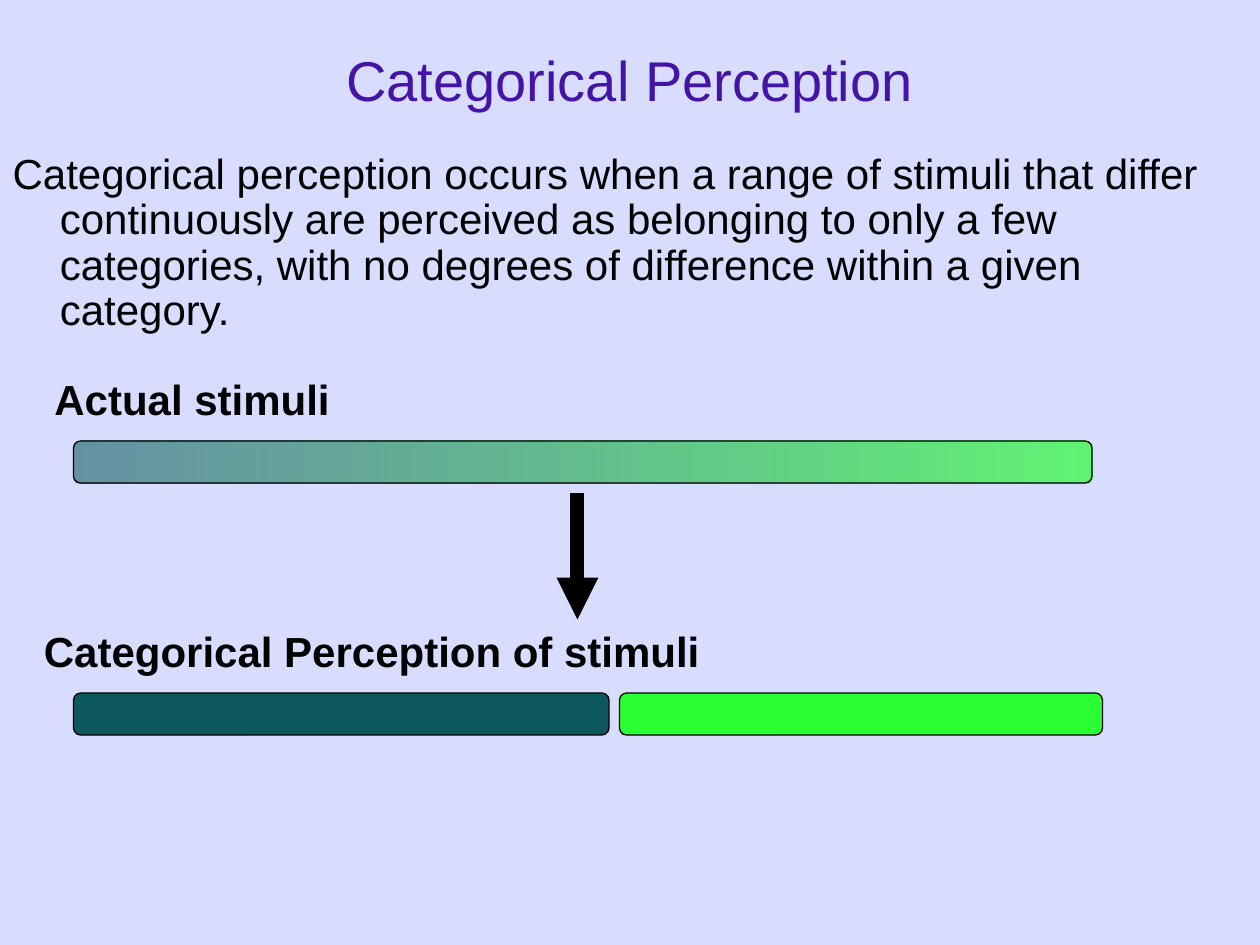
from dataclasses import dataclass

from pptx import Presentation
from pptx.dml.color import RGBColor
from pptx.enum.shapes import MSO_CONNECTOR, MSO_SHAPE
from pptx.enum.text import MSO_ANCHOR, MSO_AUTO_SIZE, PP_ALIGN
from pptx.oxml.ns import qn
from pptx.util import Pt
from lxml.etree import SubElement


@dataclass(frozen=True)
class Theme:
    font: str = "Arial"
    background: RGBColor = RGBColor.from_string("D8DCFF")
    title: RGBColor = RGBColor.from_string("4414A7")
    ink: RGBColor = RGBColor.from_string("000000")
    teal: RGBColor = RGBColor.from_string("0D585D")
    green: RGBColor = RGBColor.from_string("2AFF33")
    title_size: int = 32
    text_size: int = 24


theme = Theme()


def add_text(para, text, size, color, bold=False):
    span = para.add_run()
    span.text = text
    span.font.name = theme.font
    span.font.size = Pt(size)
    span.font.bold = bold
    span.font.color.rgb = color


def place(shape, left, top, width, height):
    shape.left, shape.top = Pt(left), Pt(top)
    shape.width, shape.height = Pt(width), Pt(height)


deck = Presentation()
deck.slide_width, deck.slide_height = Pt(720), Pt(540)
page = deck.slides.add_slide(deck.slide_layouts[1])
page.background.fill.solid()
page.background.fill.fore_color.rgb = theme.background

title = page.shapes.title
place(title, 54, 0, 612, 90)
title.text_frame.auto_size = MSO_AUTO_SIZE.NONE
title.text_frame.vertical_anchor = MSO_ANCHOR.MIDDLE
para = title.text_frame.paragraphs[0]
para.alignment = PP_ALIGN.CENTER
add_text(para, "Categorical Perception", theme.title_size, theme.title)

body = page.placeholders[1]
place(body, 0, 84, 720, 126)
body.text_frame.auto_size = MSO_AUTO_SIZE.NONE
para = body.text_frame.paragraphs[0]
para.line_spacing = 0.9
para.space_before = Pt(4.8)
properties = para._p.get_or_add_pPr()
properties.set("marL", str(Pt(27)))
properties.set("indent", str(Pt(-27)))
SubElement(properties, qn("a:buNone"))
add_text(
    para,
    "Categorical perception occurs when a range of stimuli that differ "
    "continuously are perceived as belonging to only a few categories, "
    "with no degrees of difference within a given category.",
    theme.text_size,
    theme.ink,
)

bars = [
    (42, 252, 582, [(theme.teal, 56), (theme.green, 68)]),
    (42, 396, 306, theme.teal),
    (354, 396, 276, theme.green),
]
for left, top, width, paint in bars:
    bar = page.shapes.add_shape(
        MSO_SHAPE.ROUNDED_RECTANGLE, Pt(left), Pt(top), Pt(width), Pt(24)
    )
    bar.shadow.inherit = False
    bar.line.color.rgb = theme.ink
    bar.line.width = Pt(0.75)
    if isinstance(paint, list):
        bar.fill.gradient()
        bar.fill.gradient_angle = 0
        for stop, (color, opacity) in zip(bar.fill.gradient_stops, paint):
            stop.color.rgb = color
            color_node = stop._gs.find(qn("a:srgbClr"))
            SubElement(color_node, qn("a:alpha"), val=str(opacity * 1000))
    else:
        bar.fill.solid()
        bar.fill.fore_color.rgb = paint

arrow = page.shapes.add_connector(
    MSO_CONNECTOR.STRAIGHT, Pt(330), Pt(282), Pt(330), Pt(354)
)
arrow.line.color.rgb = theme.ink
arrow.line.width = Pt(8)
SubElement(arrow.line._get_or_add_ln(), qn("a:tailEnd"), type="triangle")
SubElement(arrow._element.spPr, qn("a:effectLst"))

labels = [
    ("Actual stimuli", 24, 210, 172),
    ("Categorical Perception of stimuli", 18, 354, 389.5),
]
for text, left, top, width in labels:
    box = page.shapes.add_textbox(Pt(left), Pt(top), Pt(width), Pt(36))
    box.text_frame.word_wrap = False
    box.text_frame.auto_size = MSO_AUTO_SIZE.SHAPE_TO_FIT_TEXT
    add_text(box.text_frame.paragraphs[0], text, theme.text_size, theme.ink, True)

deck.save("out.pptx")
